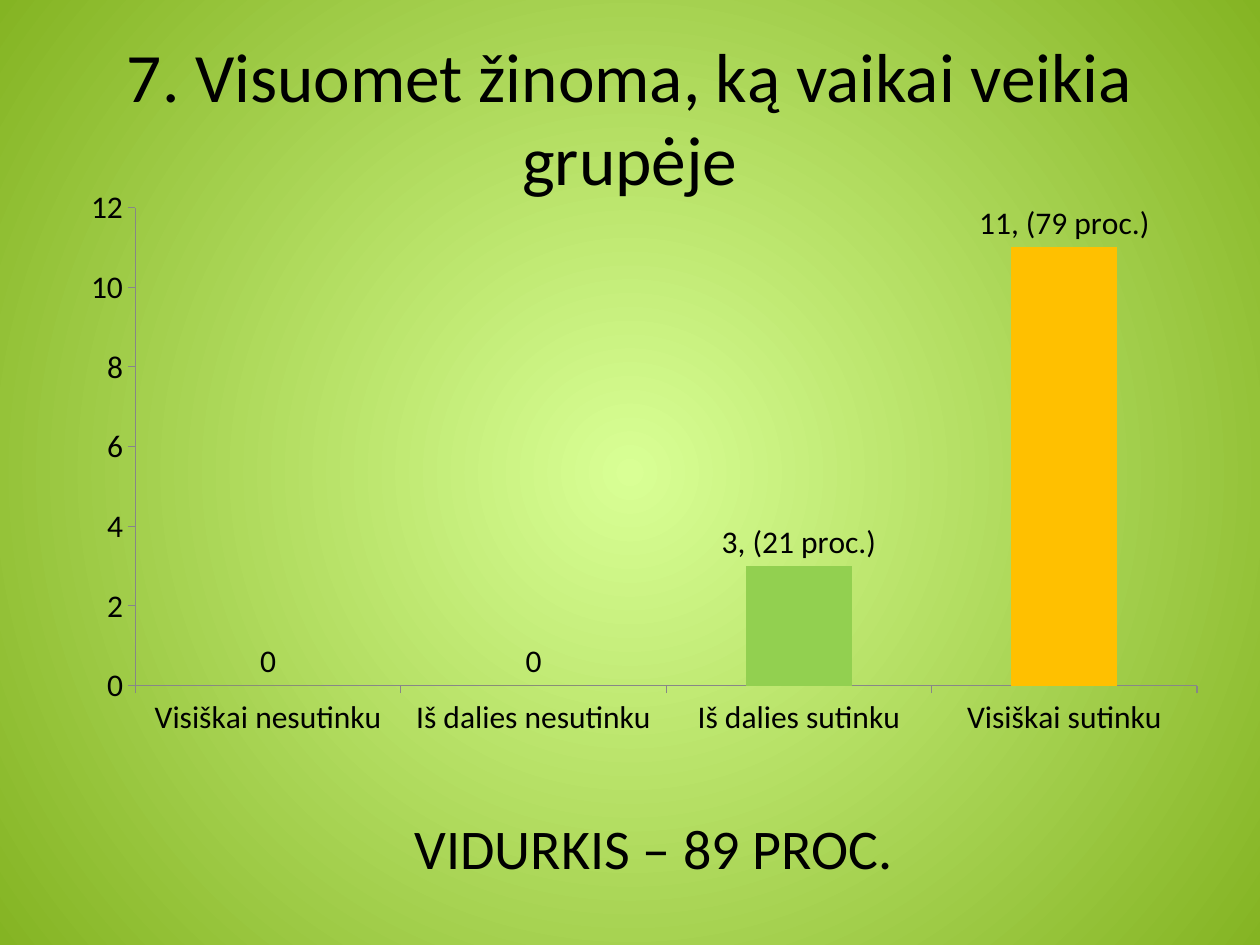
from dataclasses import dataclass

from lxml import etree
from pptx import Presentation
from pptx import util as u
from pptx.chart.data import CategoryChartData
from pptx.dml.color import RGBColor
from pptx.enum import chart as ch, text
from pptx.oxml.ns import qn


@dataclass(frozen=True)
class Theme:
    font: str = "Calibri"
    ink: str = "000000"
    axis: str = "878787"
    glow: str = "D9FF95"
    edge: str = "84B423"
    bar: str = "94C600"
    title: float = 39.6
    note: float = 32
    label: float = 18


THEME = Theme()
VOTES = {
    "Visiškai nesutinku": 0,
    "Iš dalies nesutinku": 0,
    "Iš dalies sutinku": 3,
    "Visiškai sutinku": 11,
}
MARKS = {2: ("92D050", "3, (21 proc.)"), 3: ("FFC000", "11, (79 proc.)")}


def rgb(code):
    return RGBColor.from_string(code)


def style(font, size):
    font.name = THEME.font
    font.size = u.Pt(size)
    font.bold = False
    font.color.rgb = rgb(THEME.ink)


def paint(fill, code):
    fill.solid()
    fill.fore_color.rgb = rgb(code)


def add_glow(slide):
    """Fill the background with a round gradient from the centre."""
    fill = slide.background.fill
    fill.gradient()
    for stop, code in zip(fill.gradient_stops, (THEME.glow, THEME.edge)):
        stop.color.rgb = rgb(code)
    grad = slide.element.find(".//" + qn("a:gradFill"))
    grad.remove(grad.find(qn("a:lin")))
    round_ = etree.SubElement(grad, qn("a:path"), {"path": "circle"})
    sides = {side: "50000" for side in "ltrb"}
    etree.SubElement(round_, qn("a:fillToRect"), sides)


def add_text(slide, words, size, left, top, width, height):
    box = slide.shapes.add_textbox(*map(u.Inches, (left, top, width, height)))
    frame = box.text_frame
    frame.word_wrap = True
    frame.vertical_anchor = text.MSO_ANCHOR.MIDDLE
    line = frame.paragraphs[0]
    line.alignment = text.PP_ALIGN.CENTER
    run = line.add_run()
    run.text = words
    style(run.font, size)


def set_axis(axis):
    axis.has_major_gridlines = False
    axis.major_tick_mark = ch.XL_TICK_MARK.OUTSIDE
    axis.minor_tick_mark = ch.XL_TICK_MARK.NONE
    axis.format.line.color.rgb = rgb(THEME.axis)
    axis.format.line.width = u.Pt(0.75)
    style(axis.tick_labels.font, THEME.label)


def set_plot(chart, **parts):
    """Place the inner plot area, in fractions of the chart."""
    area = chart.element.find(".//" + qn("c:plotArea"))
    layout = area.find(qn("c:layout"))
    if layout is None:
        layout = etree.Element(qn("c:layout"))
        area.insert(0, layout)
    manual = etree.SubElement(layout, qn("c:manualLayout"))
    rules = {"layoutTarget": "inner", "xMode": "edge", "yMode": "edge", **parts}
    for name, value in rules.items():
        etree.SubElement(manual, qn("c:" + name), val=str(value))


def mark_bar(point, code, words):
    paint(point.format.fill, code)
    label = point.data_label
    run = label.text_frame.paragraphs[0].add_run()
    run.text = words
    style(run.font, THEME.label)
    label.position = ch.XL_LABEL_POSITION.OUTSIDE_END


def add_bars(slide, left, top, width, height):
    data = CategoryChartData()
    data.categories = list(VOTES)
    data.add_series("Series 1", list(VOTES.values()))
    spot = map(u.Inches, (left, top, width, height))
    kind = ch.XL_CHART_TYPE.COLUMN_CLUSTERED
    chart = slide.shapes.add_chart(kind, *spot, data).chart
    chart.has_legend = False
    chart.has_title = False
    style(chart.font, THEME.label)
    set_plot(chart, x=0.07, y=0.035, w=0.915, h=0.75)

    set_axis(chart.category_axis)
    set_axis(chart.value_axis)
    chart.value_axis.minimum_scale = 0
    chart.value_axis.maximum_scale = 12
    chart.value_axis.major_unit = 2

    plot = chart.plots[0]
    plot.gap_width = 150
    plot.vary_by_categories = False
    bars = plot.series[0]
    bars.invert_if_negative = False
    paint(bars.format.fill, THEME.bar)
    labels = bars.data_labels
    labels.show_value = True
    labels.position = ch.XL_LABEL_POSITION.OUTSIDE_END
    style(labels.font, THEME.label)
    for index, (code, words) in MARKS.items():
        mark_bar(bars.points[index], code, words)


def main():
    deck = Presentation()
    deck.slide_width, deck.slide_height = u.Inches(10), u.Inches(7.5)
    slide = deck.slides.add_slide(deck.slide_layouts[6])
    add_glow(slide)
    add_text(slide, "7. Visuomet žinoma, ką vaikai veikia grupėje",
             THEME.title, 0.5, 0.3, 9, 1.25)
    add_bars(slide, 0.43, 1.47, 9.21, 5.06)
    add_text(slide, "VIDURKIS – 89 PROC.", THEME.note, 0.9, 6.4, 8.58, 0.64)
    deck.save("out.pptx")


if __name__ == "__main__":
    main()
